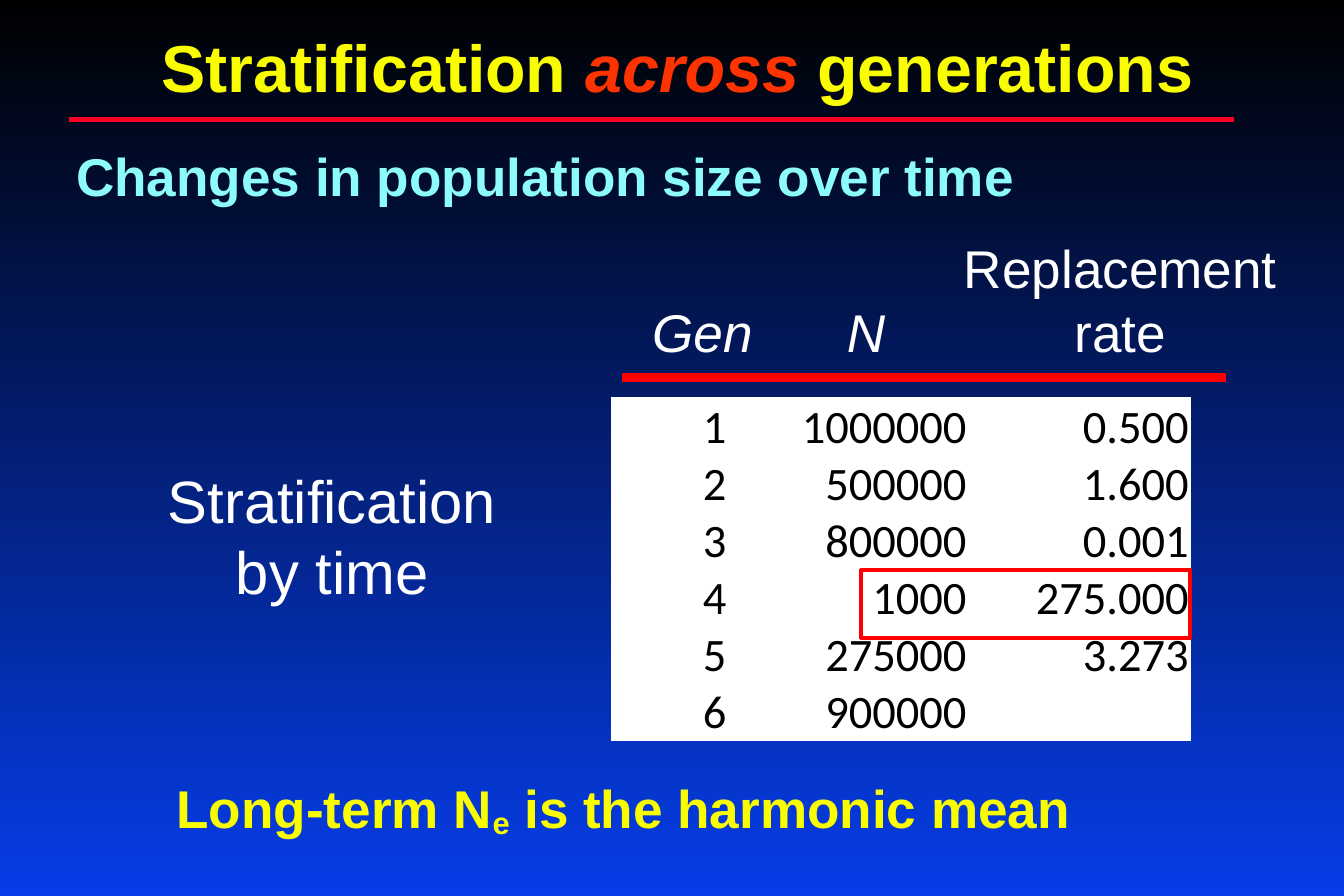
from dataclasses import dataclass

from lxml.etree import SubElement
from pptx import Presentation
from pptx.dml.color import RGBColor
from pptx.enum.shapes import MSO_CONNECTOR, MSO_SHAPE
from pptx.enum.text import MSO_ANCHOR, PP_ALIGN
from pptx.oxml.ns import qn
from pptx.util import Emu, Pt


@dataclass(frozen=True)
class Theme:
    sky_top: str = "000000"
    sky_bottom: str = "063DE8"
    yellow: str = "FAFD00"
    orange: str = "FF3300"
    cyan: str = "8CFBF9"
    white: str = "FFFFFF"
    black: str = "000000"
    crimson: str = "FC0128"
    red: str = "FF0000"
    font: str = "Arial"
    table_font: str = "Calibri"
    title: int = 40
    label: int = 36
    body: int = 32
    cell: int = 28


THEME = Theme()
PX_PER_INCH = 100
GENERATIONS = [
    ("1", "1000000", "0.500"),
    ("2", "500000", "1.600"),
    ("3", "800000", "0.001"),
    ("4", "1000", "275.000"),
    ("5", "275000", "3.273"),
    ("6", "900000", ""),
]
COLUMN_WIDTHS = (97, 201, 186)


def px(n):
    return Emu(n * 914400 // PX_PER_INCH)


def rgb(value):
    return RGBColor.from_string(value)


def style(p, name, size, color, align, bold=False, italic=False):
    p.alignment = align
    p.font.name = name
    p.font.size = Pt(size)
    p.font.color.rgb = rgb(color)
    p.font.bold = bold
    p.font.italic = italic


def add_background(s):
    fill = s.background.fill
    fill.gradient()
    fill.gradient_angle = 270
    for stop, color in zip(fill.gradient_stops, (THEME.sky_top, THEME.sky_bottom)):
        stop.color.rgb = rgb(color)


def add_text(s, box, lines, size, color, align=PP_ALIGN.LEFT,
             anchor=MSO_ANCHOR.TOP, bold=False, italic=False):
    tf = s.shapes.add_textbox(*map(px, box)).text_frame
    tf.word_wrap = True
    tf.vertical_anchor = anchor
    for i, runs in enumerate(lines):
        p = tf.add_paragraph() if i else tf.paragraphs[0]
        style(p, THEME.font, size, color, align, bold, italic)
        for text in runs:
            p.add_run().text = text
    return tf


def add_rule(s, x1, x2, y, color, width):
    line = s.shapes.add_connector(MSO_CONNECTOR.STRAIGHT, px(x1), px(y), px(x2), px(y))
    line.line.color.rgb = rgb(color)
    line.line.width = Pt(width)
    SubElement(line._element.spPr, qn("a:effectLst"))


def add_generation_table(s, left, top, height):
    table = s.shapes.add_table(len(GENERATIONS), len(COLUMN_WIDTHS), px(left), px(top),
                               px(sum(COLUMN_WIDTHS)), px(height)).table
    table.first_row = table.horz_banding = False
    for column, width in zip(table.columns, COLUMN_WIDTHS):
        column.width = px(width)
    for i, values in enumerate(GENERATIONS):
        for j, value in enumerate(values):
            cell = table.cell(i, j)
            cell.fill.solid()
            cell.fill.fore_color.rgb = rgb(THEME.white)
            cell.vertical_anchor = MSO_ANCHOR.BOTTOM
            cell.margin_left = cell.margin_right = cell.margin_top = px(1)
            cell.margin_bottom = 0
            cell.text = value
            style(cell.text_frame.paragraphs[0], THEME.table_font, THEME.cell,
                  THEME.black, PP_ALIGN.RIGHT)


def add_highlight(s, box):
    sp = s.shapes.add_shape(MSO_SHAPE.RECTANGLE, *map(px, box))
    sp.shadow.inherit = False
    sp.fill.background()
    sp.line.color.rgb = rgb(THEME.red)
    sp.line.width = Pt(2.25)


def main():
    prs = Presentation()
    prs.slide_width, prs.slide_height = px(1125), px(750)
    s = prs.slides.add_slide(prs.slide_layouts[6])
    add_background(s)

    tf = add_text(s, (100, 17, 934, 77), [("Stratification ", "across", " generations")],
                  THEME.title, THEME.yellow, PP_ALIGN.CENTER, bold=True)
    across = tf.paragraphs[0].runs[1]
    across.font.italic = True
    across.font.color.rgb = rgb(THEME.orange)
    add_rule(s, 58, 1033, 100, THEME.crimson, 3)
    add_text(s, (54, 115, 1033, 64), [("Changes in population size over time",)],
             THEME.body, THEME.cyan, bold=True)

    for center, width, lines, italic in (
        (588, 120, [("Gen",)], True),
        (725, 80, [("N",)], True),
        (938, 300, [("Replacement",), ("rate",)], False),
    ):
        add_text(s, (center - width // 2, 191, width, 118), lines, THEME.body, THEME.white,
                 PP_ALIGN.CENTER, MSO_ANCHOR.BOTTOM, italic=italic)
    add_rule(s, 521, 1026, 316, THEME.red, 5)

    add_text(s, (129, 383, 298, 131), [("Stratification",), ("by time",)],
             THEME.label, THEME.white, PP_ALIGN.CENTER)
    add_generation_table(s, 512, 333, 285)
    add_highlight(s, (721, 477, 275, 57))

    tf = add_text(s, (138, 644, 817, 64), [("Long-term N", "e", " is the harmonic mean")],
                  THEME.body, THEME.yellow, bold=True)
    tf.paragraphs[0].runs[1]._r.get_or_add_rPr().set("baseline", "-12000")

    prs.save("out.pptx")


if __name__ == "__main__":
    main()
